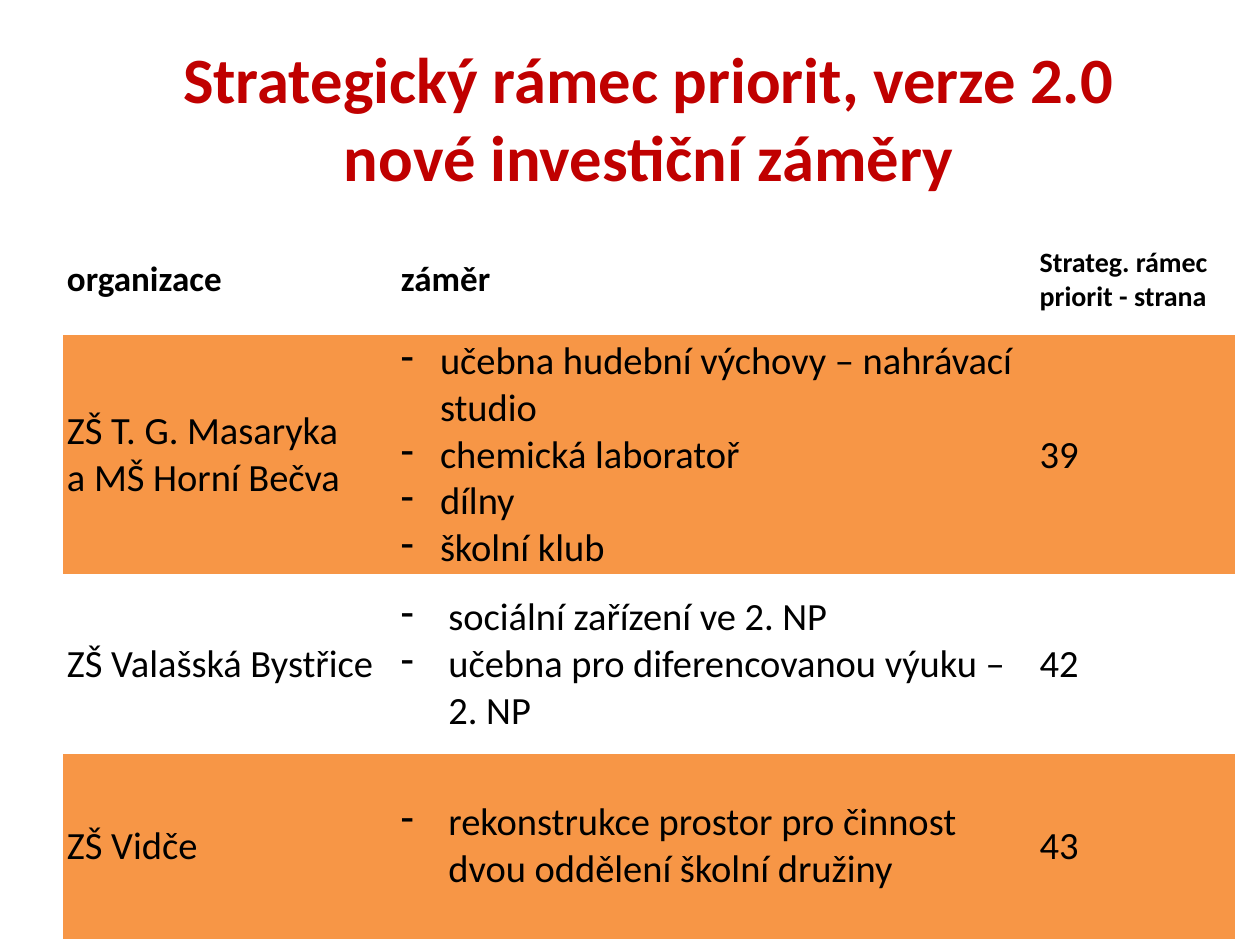
"""Build a slide with a table of new school investment plans."""
from dataclasses import dataclass

from lxml import etree
from pptx import Presentation
from pptx.dml.color import RGBColor
from pptx.enum.text import MSO_ANCHOR, MSO_AUTO_SIZE, PP_ALIGN
from pptx.oxml.ns import qn
from pptx.util import Cm, Pt

MIDDLE = MSO_ANCHOR.MIDDLE
CENTER = PP_ALIGN.CENTER
NO_AUTOFIT = MSO_AUTO_SIZE.NONE
FONT = "Calibri"
COLORS = {"title": "C00000", "text": "000000", "band": "F79646"}
PLAIN_STYLE = "{2D5ABB26-0587-4C30-8999-92F81FD0307C}"
COLUMN_WIDTHS = (6.73, 12.88, 4.01)
HEADER_HEIGHT = 2.24
HEADERS = (("organizace", 20), ("záměr", 20), ("Strateg. rámec priorit - strana", 16))


@dataclass
class School:
    """One table row: a school, its plans and the page listing them."""

    name: str
    plans: list[str]
    page_number: str
    height: float
    indent: float = 0.96
    banded: bool = False


SCHOOLS = [
    School(
        "ZŠ T. G. Masaryka \na MŠ Horní Bečva",
        ["učebna hudební výchovy – nahrávací studio", "chemická laboratoř", "dílny", "školní klub"],
        "39", 3.96, indent=0.79, banded=True,
    ),
    School(
        "ZŠ Valašská Bystřice",
        ["sociální zařízení ve 2. NP", "učebna pro diferencovanou výuku – \n2. NP"],
        "42", 3.61,
    ),
    School(
        "ZŠ Vidče",
        ["rekonstrukce prostor pro činnost dvou oddělení školní družiny"],
        "43", 3.73, banded=True,
    ),
]


def write_paragraph(para, text: str, *, size: float = 22, bold: bool = False,
                    color: str = "text", indent: float = 0) -> None:
    """Write formatted text, with a dash bullet when an indent is given."""
    para.text = text
    if indent:
        properties = para._p.get_or_add_pPr()
        properties.set("marL", str(Cm(indent)))
        properties.set("indent", str(-Cm(indent)))
        etree.SubElement(properties, qn("a:buFontTx"))
        etree.SubElement(properties, qn("a:buChar")).set("char", "-")
    for span in para.runs:
        span.font.name = FONT
        span.font.size = Pt(size)
        span.font.bold = bold
        span.font.color.rgb = RGBColor.from_string(COLORS[color])


def fill_cell(cell, lines: list[str], *, banded: bool = False, **text_format) -> None:
    """Set the margins, the fill and the paragraphs of a cell."""
    cell.vertical_anchor = MIDDLE
    cell.margin_left = cell.margin_right = Cm(0.08)
    cell.margin_top = cell.margin_bottom = Cm(0.05)
    if banded:
        cell.fill.solid()
        cell.fill.fore_color.rgb = RGBColor.from_string(COLORS["band"])
    else:
        cell.fill.background()
    frame = cell.text_frame
    for index, line in enumerate(lines):
        para = frame.add_paragraph() if index else frame.paragraphs[0]
        write_paragraph(para, line, **text_format)


def add_title(page) -> None:
    """Place and format the title placeholder."""
    box = page.shapes.title
    box.left, box.top, box.width, box.height = Cm(1.27), Cm(0.76), Cm(23.62), Cm(3.18)
    frame = box.text_frame
    frame.auto_size = NO_AUTOFIT
    frame.vertical_anchor = MIDDLE
    para = frame.paragraphs[0]
    write_paragraph(para, "Strategický rámec priorit, verze 2.0\nnové investiční záměry",
                    size=36.9, bold=True, color="title")
    para.alignment = CENTER


def add_school_table(page) -> None:
    """Draw the header and one row per school."""
    heights = [HEADER_HEIGHT] + [school.height for school in SCHOOLS]
    holder = page.shapes.add_table(len(heights), len(COLUMN_WIDTHS), Cm(1.27), Cm(4.52),
                                   Cm(sum(COLUMN_WIDTHS)), Cm(sum(heights)))
    next(holder.element.iter(qn("a:tableStyleId"))).text = PLAIN_STYLE
    table = holder.table
    table.first_row = table.horz_banding = False
    for column, width in zip(table.columns, COLUMN_WIDTHS):
        column.width = Cm(width)
    for row, height in zip(table.rows, heights):
        row.height = Cm(height)
    for index, (label, size) in enumerate(HEADERS):
        fill_cell(table.cell(0, index), [label], size=size, bold=True)
    for index, school in enumerate(SCHOOLS, start=1):
        fill_cell(table.cell(index, 0), [school.name], banded=school.banded)
        fill_cell(table.cell(index, 1), school.plans, banded=school.banded, indent=school.indent)
        fill_cell(table.cell(index, 2), [school.page_number], banded=school.banded)


def main() -> None:
    """Create and save the deck."""
    deck = Presentation()
    deck.slide_width, deck.slide_height = Cm(25.4), Cm(19.05)
    page = deck.slides.add_slide(deck.slide_layouts[5])
    add_title(page)
    add_school_table(page)
    deck.save("out.pptx")


if __name__ == "__main__":
    main()
